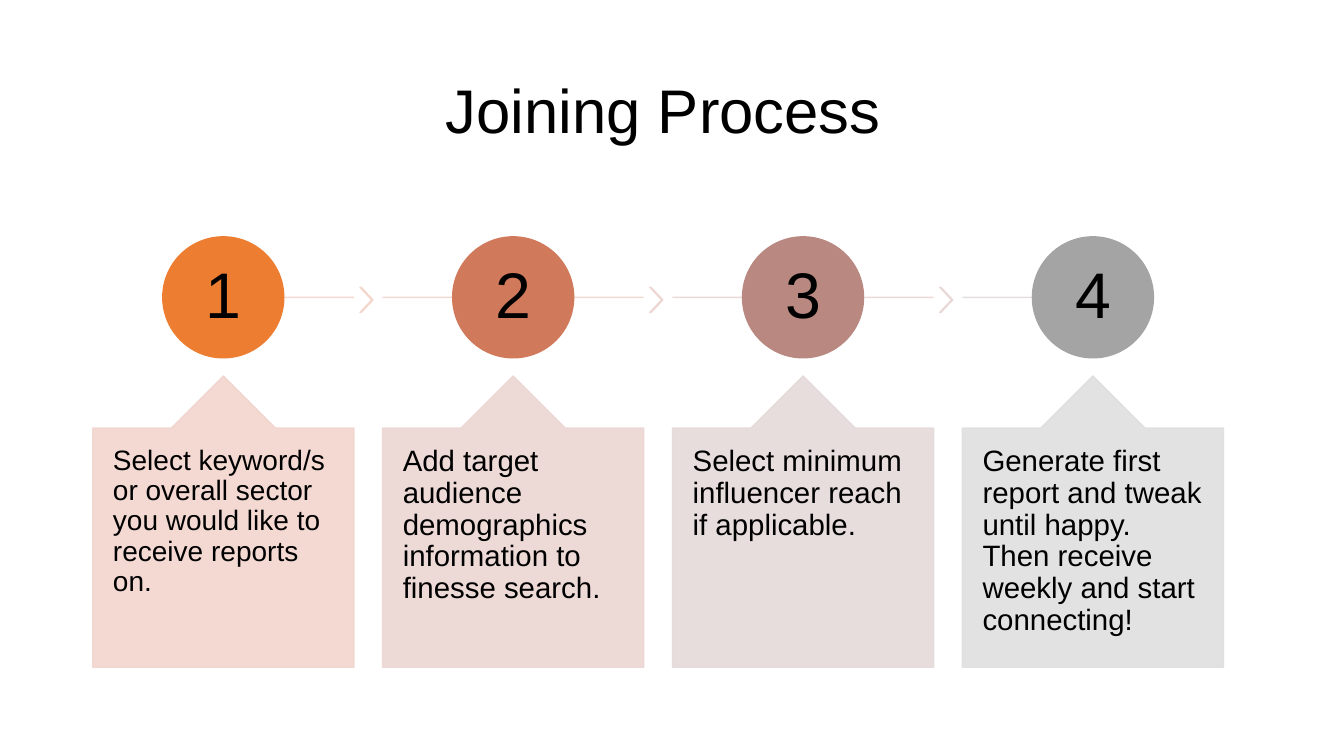
"""Build the Joining Process slide: four numbered steps joined by arrows."""
from lxml.etree import SubElement
from pptx import Presentation
from pptx.dml.color import RGBColor
from pptx.enum.shapes import MSO_CONNECTOR as Connector, MSO_SHAPE as Shape
from pptx.enum.text import MSO_ANCHOR as Anchor, PP_ALIGN as Align
from pptx.oxml.ns import qn
from pptx.util import Inches, Pt


def paint(part, color, alpha=100):
    part.solid()
    part.fore_color.rgb = RGBColor.from_string(color)
    if alpha < 100:
        tone = part._xPr.find(qn("a:solidFill")).find(qn("a:srgbClr"))
        SubElement(tone, qn("a:alpha"), val=str(alpha * 1000))


def write(frame, text, size, align, anchor, inset):
    frame.text = text
    margins = dict(zip(("margin_left", "margin_top", "margin_right", "margin_bottom"),
                       map(Inches, inset)))
    for key, value in {"word_wrap": True, "vertical_anchor": anchor, **margins}.items():
        setattr(frame, key, value)
    paragraph = frame.paragraphs[0]
    paragraph.alignment, paragraph.line_spacing = align, 0.9
    font = paragraph.runs[0].font
    font.name, font.size = "Arial", Pt(size)
    paint(font.fill, "000000")


deck = Presentation()
deck.slide_width, deck.slide_height = Inches(13.33), Inches(7.5)
slide = deck.slides.add_slide(deck.slide_layouts[5])
shapes = slide.shapes

title = shapes.title
for side, length in {"left": 0.91, "top": 0.4, "width": 11.51, "height": 1.45}.items():
    setattr(title, side, Inches(length))
write(title.text_frame, "Joining Process ", 44, Align.CENTER, Anchor.MIDDLE,
      (0.1, 0.05, 0.1, 0.05))

LEFT, PITCH, CARD_WIDTH = 0.92, 2.875, 2.59
CIRCLE, LINE_TOP = 1.2, 2.95
steps = [
    ("Select keyword/s or overall sector you would like to receive reports on.",
     20, "ED7D31", "F7D5CB", "F4D5CC", "F2D5CE"),
    ("Add target audience demographics information to finesse search.",
     21, "D07A5B", "F0D5D0", "EED6D1", "ECD6D3"),
    ("Select minimum influencer reach if applicable.",
     21, "B88881", "EAD7D5", "E8D8D7", "E5DAD9"),
    ("Generate first report and tweak until happy. Then receive weekly and start connecting!",
     21, "A4A4A4", "E3DBDB", None, "DFDFDF"),
]
last = len(steps) - 1

for index, (advice, size, circle_color, line_color, arrow_color, card_color) in enumerate(steps):
    left = LEFT + index * PITCH
    center, right = left + CARD_WIDTH / 2, left + CARD_WIDTH

    line_start = center if index == 0 else left
    line_end = center if index == last else right
    track = shapes.add_connector(Connector.STRAIGHT, Inches(line_start), Inches(LINE_TOP),
                                 Inches(line_end), Inches(LINE_TOP))
    track.line.width = Pt(1)
    paint(track.line.fill, line_color, 90)
    SubElement(track._element.spPr, qn("a:effectLst"))

    parts = [
        (Shape.OVAL, center - CIRCLE / 2, LINE_TOP - CIRCLE / 2, CIRCLE, CIRCLE,
         (), circle_color, 100,
         (str(index + 1), 46, Align.CENTER, Anchor.MIDDLE, (0.05,) * 4)),
        (Shape.UP_ARROW_CALLOUT, left, 3.73, CARD_WIDTH, 2.89,
         (0.5, 0.2, 0.2, 1), card_color, 90,
         (advice, size, Align.LEFT, Anchor.TOP, (0.2, 0.18, 0.2, 0.18))),
    ]
    if arrow_color:
        parts.insert(0, (Shape.CHEVRON, right + 0.06, 2.85, 0.13, 0.25,
                         (0.9,), arrow_color, 90, None))

    for preset, x, y, width, height, adjustments, color, alpha, wording in parts:
        part = shapes.add_shape(preset, Inches(x), Inches(y), Inches(width), Inches(height))
        part.shadow.inherit = False
        for position, value in enumerate(adjustments):
            part.adjustments[position] = value
        part.line.width = Pt(1)
        paint(part.fill, color, alpha)
        paint(part.line.fill, color, alpha)
        if wording:
            write(part.text_frame, *wording)

deck.save("out.pptx")
